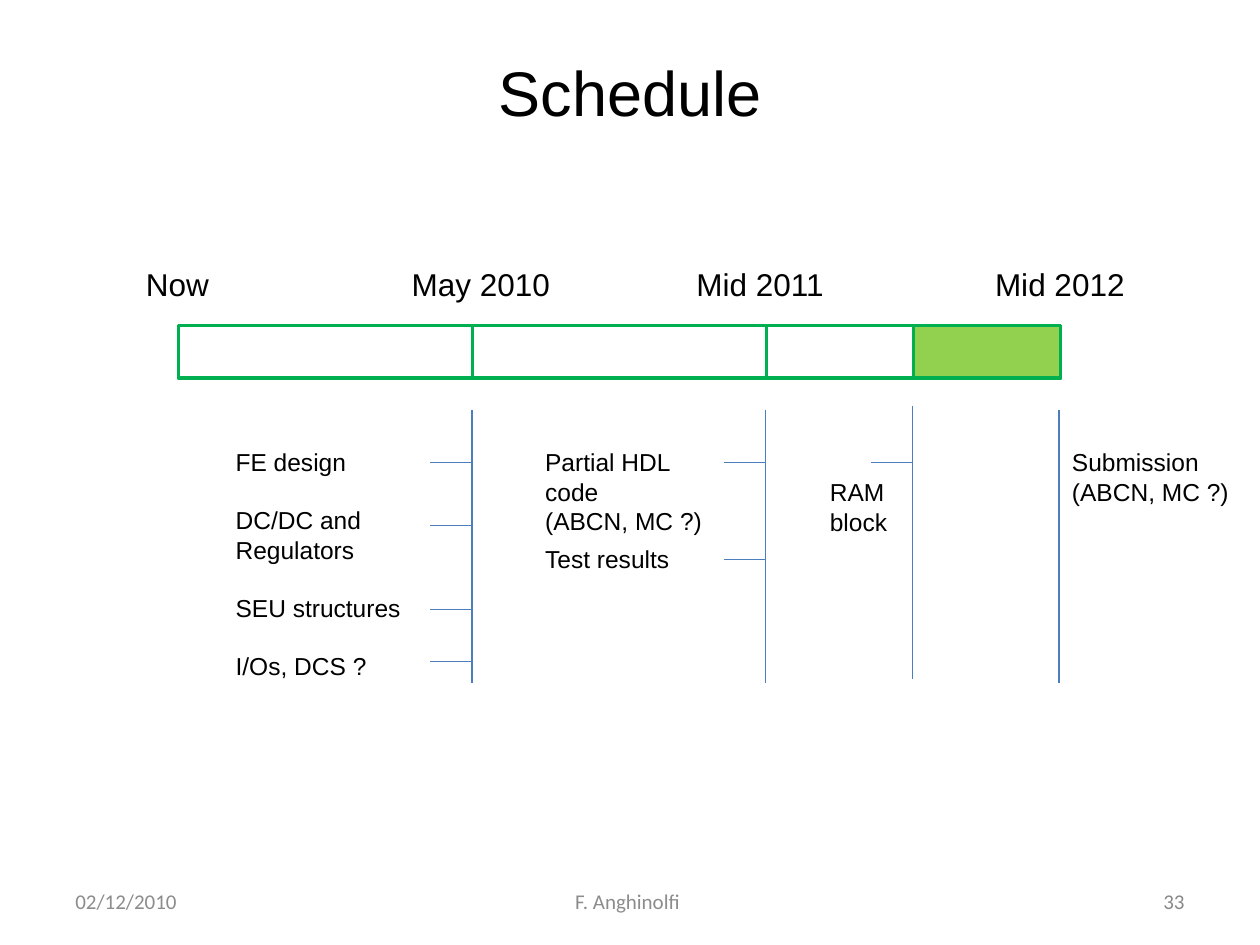
from dataclasses import dataclass
from pptx import Presentation
from pptx.dml.color import RGBColor
from pptx.enum.shapes import MSO_CONNECTOR as Connector, MSO_SHAPE as Shape
from pptx.enum.text import MSO_ANCHOR as Anchor, MSO_AUTO_SIZE as AutoSize, PP_ALIGN as Align
from pptx.oxml.ns import qn
from pptx.util import Cm, Pt
from lxml.etree import SubElement


@dataclass(frozen=True)
class Theme:
    """Colours, fonts and type sizes of the deck."""
    ink: str = "000000"
    muted: str = "8C8C8C"
    number: str = "898989"
    white: str = "FFFFFF"
    border: str = "00B050"
    final: str = "92D050"
    guide: str = "4B7EBC"
    body_font: str = "Arial"
    footer_font: str = "Calibri"
    title_size: int = 36
    date_size: int = 18
    task_size: int = 14
    footer_size: int = 12
    task_gap: float = 16.5


@dataclass(frozen=True)
class Box:
    """A rectangle in centimetres."""
    left: float
    top: float
    width: float
    height: float

    def inner(self, left, top, width, height):
        """Return a box placed relative to this one."""
        return Box(self.left + left, self.top + top, width, height)

    def lengths(self):
        """Return the four sides as Cm lengths."""
        return [Cm(side) for side in (self.left, self.top, self.width, self.height)]


THEME = Theme()


def add_text(page, box, lines, size, color=THEME.ink, font=THEME.body_font,
             align=Align.LEFT, anchor=Anchor.TOP, wrap=True, grow=True):
    """Add a text box from (text, space before) pairs."""
    frame = page.shapes.add_textbox(*box.lengths()).text_frame
    frame.word_wrap = wrap
    frame.auto_size = AutoSize.SHAPE_TO_FIT_TEXT if grow else AutoSize.NONE
    frame.vertical_anchor = anchor
    for index, (text, gap) in enumerate(lines):
        para = frame.add_paragraph() if index else frame.paragraphs[0]
        para.alignment = align
        para.space_before = Pt(gap)
        span = para.add_run()
        span.text = text
        span.font.name = font
        span.font.size = Pt(size)
        span.font.color.rgb = RGBColor.from_string(color)


def add_line(page, start, end):
    """Add a thin guide line between two points."""
    points = [Cm(value) for value in (*start, *end)]
    line = page.shapes.add_connector(Connector.STRAIGHT, *points)
    line.line.width = Pt(0.75)
    line.line.color.rgb = RGBColor.from_string(THEME.guide)
    SubElement(line._element.spPr, qn("a:effectLst"))


def add_bar(page, box, fill):
    """Add one bordered period of the time bar."""
    bar = page.shapes.add_shape(Shape.RECTANGLE, *box.lengths())
    bar.shadow.inherit = False
    bar.fill.solid()
    bar.fill.fore_color.rgb = RGBColor.from_string(fill)
    bar.line.width = Pt(2)
    bar.line.color.rgb = RGBColor.from_string(THEME.border)


def add_title(page, box):
    """Place the slide title."""
    add_text(page, box, [("Schedule", 0)], THEME.title_size,
             align=Align.CENTER, anchor=Anchor.MIDDLE, grow=False)


def add_time_bar(page, box):
    """Draw three equal periods and the closing phase."""
    period = box.width / 3
    for index in range(3):
        add_bar(page, box.inner(index * period, 0, period, box.height), THEME.white)
    add_bar(page, box.inner(2.5 * period, 0, period / 2, box.height), THEME.final)


def add_dates(page, box):
    """Write the dates above the time bar."""
    dates = [("Now", 0, 1.8), ("May 2010", 5.36, 3.33),
             ("Mid 2011", 11.1, 3.1), ("Mid 2012", 17.12, 3.15)]
    for date, left, width in dates:
        add_text(page, box.inner(left, 0, width, box.height), [(date, 0)],
                 THEME.date_size, wrap=False)


def add_milestone(page, box, ticks):
    """Draw a milestone line along the right edge with ticks to its left."""
    right = box.left + box.width
    add_line(page, (right, box.top), (right, box.top + box.height))
    for tick in ticks:
        height = box.top + tick
        add_line(page, (right, height), (box.left, height))


def add_milestones(page, box):
    """Draw the milestone lines under the time bar."""
    period, tick_width = box.width / 3, 0.84
    milestones = [(1, 0, (1.06, 2.33, 4.02, 5.08)), (2, 0, (1.06, 3.02)),
                  (2.5, -0.08, (1.14,)), (3, 0, ())]
    for position, top, ticks in milestones:
        left = position * period - tick_width
        add_milestone(page, box.inner(left, top, tick_width, box.height), ticks)


def add_tasks(page, box):
    """Write the tasks beside their milestones."""
    gap = THEME.task_gap
    design = [("FE design", 0), ("DC/DC and", gap), ("Regulators", 0),
              ("SEU structures", gap), ("I/Os, DCS ?", gap)]
    tasks = [
        (design, (0, 0, 3.86, 5.82), False),
        ([("Partial HDL code", 0), ("(ABCN, MC ?)", 0)], (6.24, 0, 3.71, 2.06), True),
        ([("Test results", 0)], (6.24, 1.96, 3.71, 0.86), True),
        ([("RAM block", 0)], (11.98, 0.61, 2.11, 1.45), True),
        ([("Submission", 0), ("(ABCN, MC ?)", 0)], (16.86, 0, 3.68, 3.43), False),
    ]
    for lines, place, wrap in tasks:
        add_text(page, box.inner(*place), lines, THEME.task_size, wrap=wrap)


def add_footer(page, box):
    """Place the date, author and page number."""
    side, middle = 5.92, 8.05
    items = [("02/12/2010", 0, side, Align.LEFT, THEME.muted),
             ("F. Anghinolfi ", (box.width - middle) / 2, middle, Align.CENTER, THEME.muted),
             ("33", box.width - side, side, Align.RIGHT, THEME.number)]
    for text, left, width, align, color in items:
        add_text(page, box.inner(left, 0, width, box.height), [(text, 0)],
                 THEME.footer_size, color, THEME.footer_font, align, Anchor.MIDDLE, grow=False)


def main():
    """Build and save the schedule slide."""
    deck = Presentation()
    deck.slide_width, deck.slide_height = Cm(25.4), Cm(19.05)
    page = deck.slides.add_slide(deck.slide_layouts[6])
    add_title(page, Box(1.27, 0.76, 22.86, 2.16))
    add_time_bar(page, Box(3.6, 6.56, 17.78, 1.06))
    add_dates(page, Box(2.69, 5.21, 20.3, 1.02))
    add_milestones(page, Box(3.6, 8.26, 17.75, 5.5))
    add_tasks(page, Box(4.5, 8.89, 20.54, 5.82))
    add_footer(page, Box(1.27, 17.65, 22.86, 1.02))
    deck.save("out.pptx")


if __name__ == "__main__":
    main()
